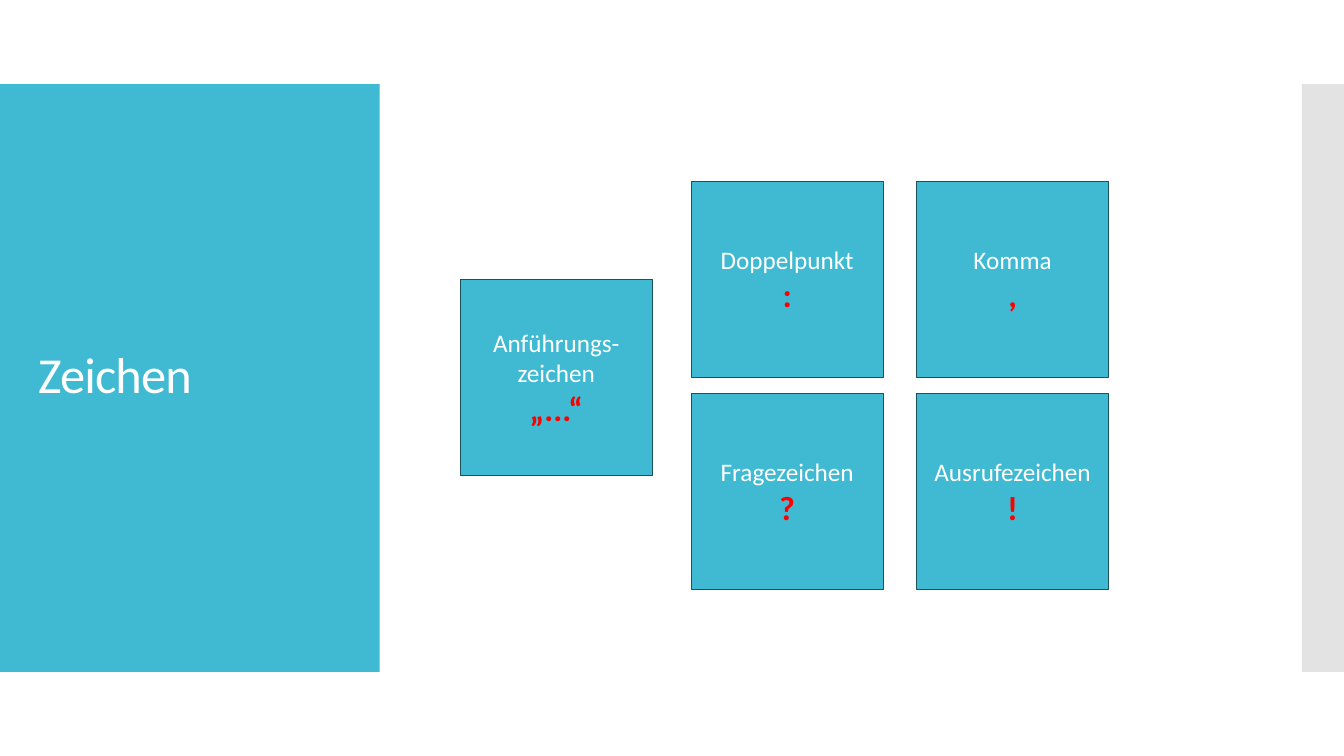
import pptx
import pptx.dml.color
import pptx.enum.shapes
import pptx.enum.text
import pptx.oxml
import pptx.oxml.ns
import pptx.util
from pptx.util import Cm

COLORS = {
    "panel": "40BAD2",
    "border": "1C525C",
    "strip": "C8C8C8",
    "label": "FFFFFF",
    "mark": "FF0000",
}
CARD_W, CARD_H = 4.84, 4.94
GRID_LEFT, GRID_TOP = 17.42, 4.57
STEP_X, STEP_Y = 5.68, 5.35
MARKS = [
    [("Doppelpunkt", ":"), ("Komma", ",")],
    [("Fragezeichen", "?"), ("Ausrufezeichen", "!")],
]


def rgb(name):
    """Return the named colour."""
    return pptx.dml.color.RGBColor.from_string(COLORS[name])


def add_text(p, text, size, color, bold=False, align=None, spacing=None, tracking=None):
    """Write a formatted run into a paragraph."""
    p.alignment = align
    p.line_spacing = spacing
    r = p.add_run()
    r.text = text
    r.font.name = "Calibri"
    r.font.size = pptx.util.Pt(size)
    r.font.bold = bold
    r.font.color.rgb = rgb(color)
    if tracking is not None:
        r.font._element.set("spc", str(tracking))


def add_rect(s, x, y, w, h, fill, line=None, alpha=None):
    """Draw a filled rectangle, with optional border and opacity in percent."""
    sp = s.shapes.add_shape(
        pptx.enum.shapes.MSO_SHAPE.RECTANGLE, Cm(x), Cm(y), Cm(w), Cm(h))
    sp.shadow.inherit = False
    sp.fill.solid()
    sp.fill.fore_color.rgb = rgb(fill)
    if line:
        sp.line.color.rgb = rgb(line)
        sp.line.width = pptx.util.Pt(0.85)
    else:
        sp.line.fill.background()
    if alpha is not None:
        clr = sp._element.spPr.find(".//" + pptx.oxml.ns.qn("a:srgbClr"))
        pptx.oxml.ns.qn("a:alpha")
        node = pptx.oxml.parse_xml(
            f'<a:alpha {pptx.oxml.ns.nsdecls("a")} val="{alpha * 1000}"/>')
        clr.append(node)
    return sp


def add_title(s, text):
    """Place the title over the left panel."""
    sp = s.shapes.add_textbox(Cm(0.71), Cm(3.12), Cm(8.18), Cm(12.78))
    tf = sp.text_frame
    tf.word_wrap = True
    tf.vertical_anchor = pptx.enum.text.MSO_ANCHOR.MIDDLE
    add_text(tf.paragraphs[0], text, 36, "label", spacing=0.9, tracking=-60)


def add_card(s, x, y, label, mark):
    """Draw a card with the name of a punctuation mark above the mark."""
    sp = add_rect(s, x, y, CARD_W, CARD_H, "panel", line="border")
    tf = sp.text_frame
    tf.word_wrap = True
    tf.vertical_anchor = pptx.enum.text.MSO_ANCHOR.MIDDLE
    center = pptx.enum.text.PP_ALIGN.CENTER
    add_text(tf.paragraphs[0], label, 18, "label", align=center)
    add_text(tf.add_paragraph(), mark, 24, "mark", bold=True, align=center)


def main():
    """Build the slide and save it."""
    prs = pptx.Presentation()
    prs.slide_width, prs.slide_height = Cm(33.87), Cm(19.05)
    s = prs.slides.add_slide(prs.slide_layouts[6])
    add_rect(s, 0, 2.12, 9.57, 14.81, "panel")
    add_rect(s, 32.81, 2.12, 1.06, 14.81, "strip", alpha=50)
    add_title(s, "Zeichen")
    add_card(s, 11.6, 7.04, "Anführungs-zeichen", "„...“")
    for row, cards in enumerate(MARKS):
        for col, (label, mark) in enumerate(cards):
            add_card(s, GRID_LEFT + col * STEP_X, GRID_TOP + row * STEP_Y, label, mark)
    prs.save("out.pptx")


if __name__ == "__main__":
    main()
